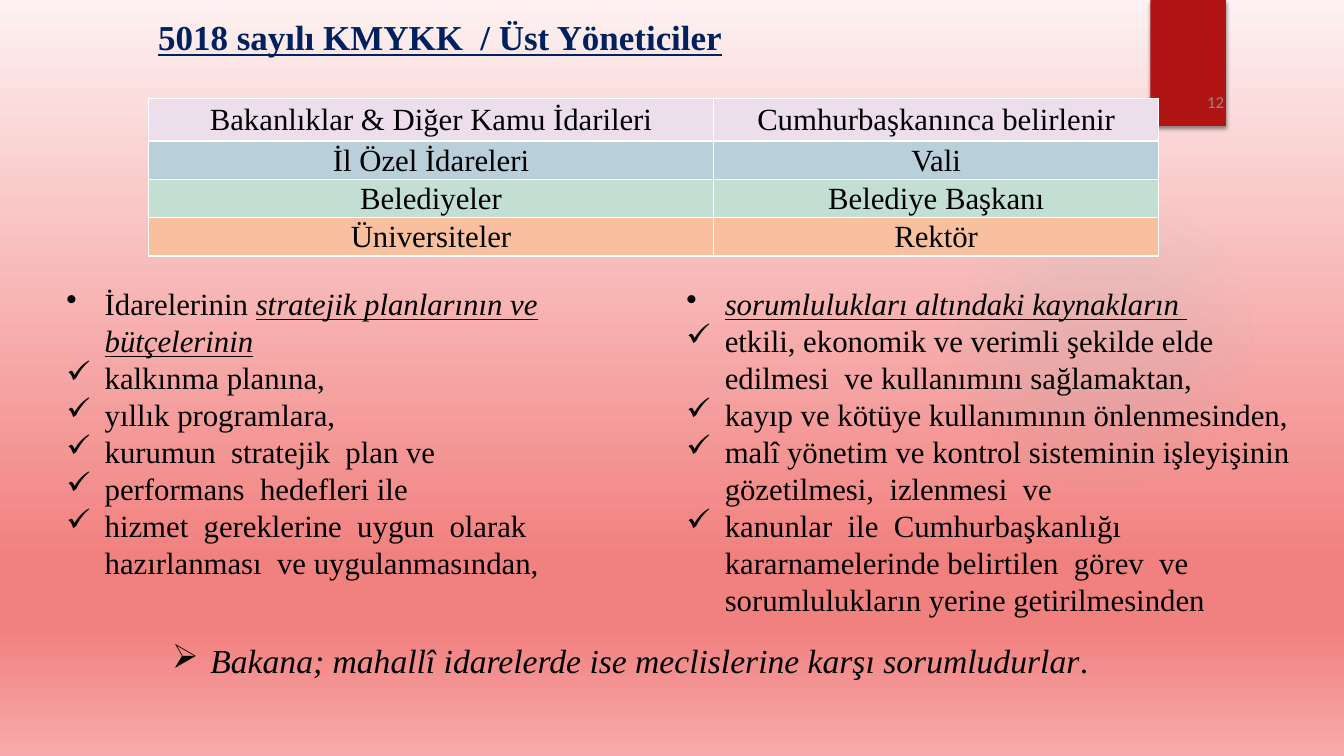
"""Build the slide on senior managers under law no. 5018."""
from lxml import etree
from pptx import Presentation, util as u
from pptx.dml.color import RGBColor
from pptx.enum import shapes, text
from pptx.oxml import ns, parse_xml

A = ns.nsdecls("a")


def rgb(value):
    """Turn a hex string into a colour."""
    return RGBColor.from_string(value)


class Deck:
    """Hold the style and the current slide."""

    font, ink, size = "Times New Roman", "000000", 22
    indent = 0.38

    def __init__(self, width, height):
        """Open a deck with one blank slide."""
        self.prs = Presentation()
        self.prs.slide_width, self.prs.slide_height = u.Inches(width), u.Inches(height)
        self.s = self.prs.slides.add_slide(self.prs.slide_layouts[6])

    def gradient(self, parent, stops, direction):
        """Replace the solid fill of an element by a gradient."""
        gs = "".join(
            f'<a:gs pos="{pos * 1000}"><a:srgbClr val="{color}">'
            f'<a:alpha val="{alpha * 1000}"/></a:srgbClr></a:gs>'
            for pos, color, alpha in stops)
        fill = parse_xml(f"<a:gradFill {A}><a:gsLst>{gs}</a:gsLst>{direction}</a:gradFill>")
        solid = parent.find(ns.qn("a:solidFill"))
        parent.replace(solid, fill)

    def background(self, stops):
        """Fill the slide from top to bottom."""
        self.s.background.fill.solid()
        bg = self.s._element.find(".//" + ns.qn("p:bgPr"))
        self.gradient(bg, stops, '<a:lin ang="5400000" scaled="0"/>')

    def shape(self, kind, box, color):
        """Add a plain shape without a line."""
        sp = self.s.shapes.add_shape(kind, *map(u.Inches, box))
        sp.shadow.inherit = False
        sp.fill.solid()
        sp.fill.fore_color.rgb = rgb(color)
        sp.line.fill.background()
        return sp

    def glow(self, box, stops):
        """Add a circle that fades outwards."""
        sp = self.shape(shapes.MSO_SHAPE.OVAL, box, stops[0][1])
        self.gradient(sp._element.spPr, stops,
                      '<a:path path="circle"><a:fillToRect l="50000" t="50000" '
                      'r="50000" b="50000"/></a:path>')

    def ribbon(self, box, color):
        """Add a rectangle with a soft shadow below."""
        sp = self.shape(shapes.MSO_SHAPE.RECTANGLE, box, color)
        effects = sp._element.spPr.find(ns.qn("a:effectLst"))
        effects.append(parse_xml(
            f'<a:outerShdw {A} blurRad="38100" dist="25400" dir="5400000">'
            '<a:srgbClr val="000000"><a:alpha val="45000"/></a:srgbClr></a:outerShdw>'))

    def run(self, p, words, style="", size=None, color=None, font=None):
        """Add a run, with style letters b, i and u."""
        r = p.add_run()
        r.text = words
        r.font.name, r.font.size = font or self.font, u.Pt(size or self.size)
        r.font.color.rgb = rgb(color or self.ink)
        r.font.bold, r.font.italic, r.font.underline = (c in style for c in "biu")

    def bullet(self, p, char):
        """Give a paragraph a hanging bullet."""
        pPr = p._p.get_or_add_pPr()
        step = u.Inches(self.indent)
        pPr.set("marL", str(step))
        pPr.set("indent", str(-step))
        etree.SubElement(pPr, ns.qn("a:buChar")).set("char", char)

    def textbox(self, box, paragraphs, align=text.PP_ALIGN.LEFT,
                anchor=text.MSO_ANCHOR.TOP, leading=None, **style):
        """Add a text box from pairs of bullet and runs."""
        tf = self.s.shapes.add_textbox(*map(u.Inches, box)).text_frame
        tf.word_wrap, tf.vertical_anchor = True, anchor
        for i, (char, runs) in enumerate(paragraphs):
            p = tf.add_paragraph() if i else tf.paragraphs[0]
            p.alignment = align
            if leading:
                p.line_spacing = u.Pt(leading)
            if char:
                self.bullet(p, char)
            for words, letters in runs:
                self.run(p, words, letters, **style)

    def border(self, cell, color):
        """Draw a one-point line round a cell."""
        tcPr = cell._tc.get_or_add_tcPr()
        for i, side in enumerate(("lnL", "lnR", "lnT", "lnB")):
            tcPr.insert(i, parse_xml(
                f'<a:{side} {A} w="12700"><a:solidFill><a:srgbClr val="{color}"/>'
                f"</a:solidFill></a:{side}>"))

    def table(self, box, widths, heights, rows):
        """Add a table with one fill colour a row."""
        t = self.s.shapes.add_table(len(rows), len(widths), *map(u.Inches, box)).table
        for col, width in zip(t.columns, widths):
            col.width = u.Inches(width)
        for row, height, (color, *labels) in zip(t.rows, heights, rows):
            row.height = u.Inches(height)
            for cell, label in zip(row.cells, labels):
                cell.fill.solid()
                cell.fill.fore_color.rgb = rgb(color)
                cell.vertical_anchor = text.MSO_ANCHOR.MIDDLE
                cell.margin_left = cell.margin_right = cell.margin_top = u.Inches(0.01)
                cell.margin_bottom = 0
                p = cell.text_frame.paragraphs[0]
                p.alignment = text.PP_ALIGN.CENTER
                self.run(p, label)
                self.border(cell, "FFFFFF")


def checklist(heading, items):
    """Put a dotted heading above ticked items."""
    return [("•", heading)] + [("✓", [(item, "")]) for item in items]


def main():
    """Draw the slide and save it."""
    d = Deck(13.33, 7.5)
    d.background([(0, "FDF1F1", 100), (74, "F1817F", 100),
                  (83, "F1817F", 100), (100, "F6ABAA", 100)])
    d.glow((9.41, 1.83, 3.08, 3.08),
           [(0, "50B9C1", 7), (36, "50B9C1", 6), (69, "50B9C1", 0)])
    d.ribbon((11.41, 0, 0.75, 1.25), "B01513")
    d.textbox((1.47, 0.11, 10.52, 0.8),
              [(None, [("5018 sayılı KMYKK  / Üst Yöneticiler", "bu")])],
              size=25, color="002060")
    d.textbox((11.32, 0.32, 0.92, 0.84), [(None, [("12", "")])],
              text.PP_ALIGN.RIGHT, text.MSO_ANCHOR.BOTTOM,
              size=12, color="8C8C8C", font="Calibri")

    plans = checklist(
        [("İdarelerinin ", ""), ("stratejik planlarının ve bütçelerinin", "iu")],
        ["kalkınma planına,",
         "yıllık programlara,",
         "kurumun  stratejik  plan ve",
         "performans  hedefleri ile",
         "hizmet  gereklerine  uygun  olarak hazırlanması  ve uygulanmasından,"])
    resources = checklist(
        [("sorumlulukları altındaki kaynakların ", "iu")],
        ["etkili, ekonomik ve verimli şekilde elde edilmesi  ve kullanımını sağlamaktan,",
         "kayıp ve kötüye kullanımının önlenmesinden,",
         "malî yönetim ve kontrol sisteminin işleyişinin  gözetilmesi,  izlenmesi  ve",
         "kanunlar  ile  Cumhurbaşkanlığı  kararnamelerinde belirtilen  görev  ve "
         "sorumlulukların yerine getirilmesinden"])
    for i, duties in enumerate((plans, resources)):
        d.textbox((0.56 + 6.15 * i, 2.78, 6.35, 3.45), duties, leading=26.4)

    d.textbox((0.16, 6.3, 12.18, 0.5),
              [("➢", [("Bakana; mahallî idarelerde ise meclislerine karşı sorumludurlar", "i"),
                      (".", "")])],
              text.PP_ALIGN.CENTER, size=24)
    d.table((1.47, 0.98, 10.02, 1.55), (5.61, 4.41), (0.42, 0.38, 0.38, 0.38), [
        ("ECDFEB", "Bakanlıklar & Diğer Kamu İdarileri", "Cumhurbaşkanınca belirlenir"),
        ("B9CFD9", "İl Özel İdareleri", "Vali"),
        ("C3DED3", "Belediyeler", "Belediye Başkanı"),
        ("F8C09F", "Üniversiteler", "Rektör")])
    d.prs.save("out.pptx")


if __name__ == "__main__":
    main()
